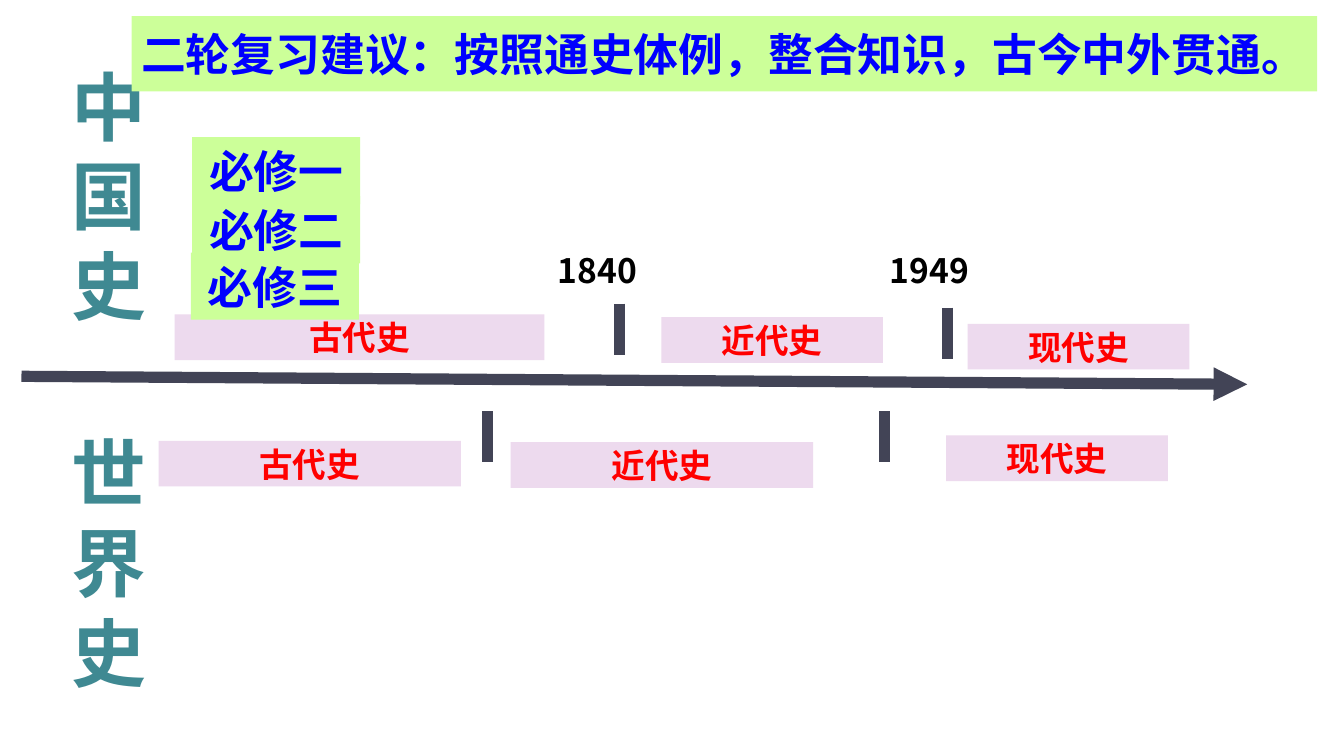
from dataclasses import dataclass
from typing import NamedTuple

from lxml.etree import SubElement as Sub
from pptx import Presentation
from pptx.dml.color import RGBColor as RGB
from pptx.enum.shapes import MSO_CONNECTOR as Conn, MSO_SHAPE as Kind
from pptx.enum.text import MSO_ANCHOR as Anchor, MSO_AUTO_SIZE as Fit, PP_ALIGN as Align
from pptx.oxml.ns import qn
from pptx.util import Inches, Pt


@dataclass(frozen=True)
class Theme:
    axis: str = "424456"
    lime: str = "CCFF99"
    lilac: str = "EDDAEE"
    white: str = "FFFFFF"
    blue: str = "0000FF"
    red: str = "FF0000"
    black: str = "000000"
    teal: str = "3F8992"
    latin: str = "Arial"
    han: str = "Noto Sans CJK SC"
    small: float = 18
    large: float = 24
    huge: float = 40
    pitch: float = 48
    stroke: float = 6


class Style(NamedTuple):
    fill: str
    ink: str
    size: float
    font: str


class Label(NamedTuple):
    text: str
    left: float
    top: float
    width: float
    height: float
    style: Style


class Side(NamedTuple):
    text: str
    top: float


class Stroke(NamedTuple):
    x1: float
    y1: float
    x2: float
    y2: float
    arrow: bool = False


T = Theme()
ERA = Style(T.lilac, T.red, T.small, T.han)
YEAR = Style(T.white, T.black, T.small, T.han)
BOOK = Style(T.lime, T.blue, T.large, T.latin)
SIDE = Style(T.white, T.teal, T.huge, T.latin)

HEAD = Label("二轮复习建议：按照通史体例，整合知识，古今中外贯通。", 0.98, 0.12, 8.82, 0.56, BOOK)
LABELS = [
    Label("1840", 3.97, 1.84, 0.95, 0.34, YEAR),
    Label("1949", 6.44, 1.84, 0.95, 0.34, YEAR),
    Label("古代史", 1.3, 2.34, 2.75, 0.34, ERA),
    Label("近代史", 4.92, 2.36, 1.65, 0.34, ERA),
    Label("现代史", 7.2, 2.41, 1.65, 0.34, ERA),
    Label("古代史", 1.18, 3.28, 2.25, 0.34, ERA),
    Label("近代史", 3.8, 3.29, 2.25, 0.34, ERA),
    Label("现代史", 7.04, 3.24, 1.65, 0.34, ERA),
    Label("必修一", 1.43, 1.02, 1.25, 0.5, BOOK),
    Label("必修二", 1.43, 1.46, 1.25, 0.5, BOOK),
    Label("必修三", 1.42, 1.88, 1.25, 0.5, BOOK),
]
SIDES = [Side("中\n国\n史", 0.4), Side("世\n界\n史", 3.13)]
TICK = 0.38
TICKS = [(4.61, 2.26), (7.05, 2.29), (3.63, 3.06), (6.58, 3.06)]
STROKES = [Stroke(0.16, 2.8, 9.28, 2.86, True)] + [
    Stroke(x, y, x, y + TICK) for x, y in TICKS
]


def write(frame, text: str, style: Style, align: Align) -> None:
    frame.text = text
    for para in frame.paragraphs:
        para.alignment = align
        for run in para.runs:
            font = run.font
            font.size = Pt(style.size)
            font.bold = True
            font.color.rgb = RGB.from_string(style.ink)
            font.name = style.font
            props = run._r.get_or_add_rPr()
            props.set("lang", "zh-CN")
            Sub(props, qn("a:ea")).set("typeface", style.font)


def dress(shape, label: Label, align: Align) -> None:
    shape.left, shape.top = Inches(label.left), Inches(label.top)
    shape.width, shape.height = Inches(label.width), Inches(label.height)
    shape.fill.solid()
    shape.fill.fore_color.rgb = RGB.from_string(label.style.fill)
    frame = shape.text_frame
    frame.auto_size = Fit.NONE
    frame.word_wrap = True
    frame.vertical_anchor = Anchor.MIDDLE
    frame.margin_left = frame.margin_right = Inches(0.07)
    frame.margin_top = frame.margin_bottom = Inches(0.04)
    write(frame, label.text, label.style, align)


def add_label(slide, label: Label) -> None:
    box = slide.shapes.add_shape(Kind.RECTANGLE, 0, 0, 0, 0)
    box.shadow.inherit = False
    box.line.fill.background()
    dress(box, label, Align.CENTER)


def add_side(slide, side: Side) -> None:
    box = slide.shapes.add_textbox(
        Inches(0.43), Inches(side.top), Inches(0.76), Inches(2.12)
    )
    frame = box.text_frame
    frame.word_wrap = False
    frame.auto_size = Fit.SHAPE_TO_FIT_TEXT
    write(frame, side.text, SIDE, Align.CENTER)
    for para in frame.paragraphs:
        para.line_spacing = Pt(T.pitch)


def add_stroke(slide, stroke: Stroke) -> None:
    ends = (Inches(v) for v in stroke[:4])
    line = slide.shapes.add_connector(Conn.STRAIGHT, *ends)
    line.line.color.rgb = RGB.from_string(T.axis)
    line.line.width = Pt(T.stroke)
    if stroke.arrow:
        Sub(line.line._get_or_add_ln(), qn("a:tailEnd")).set("type", "triangle")
    Sub(line._element.spPr, qn("a:effectLst"))


def main() -> None:
    deck = Presentation()
    deck.slide_width = Inches(10)
    deck.slide_height = deck.slide_width * 9 // 16
    slide = deck.slides.add_slide(deck.slide_layouts[5])
    for stroke in STROKES:
        add_stroke(slide, stroke)
    for label in LABELS:
        add_label(slide, label)
    for side in SIDES:
        add_side(slide, side)
    title = slide.shapes.title
    dress(title, HEAD, Align.LEFT)
    slide.shapes._spTree.append(title._element)
    deck.save("out.pptx")


if __name__ == "__main__":
    main()
